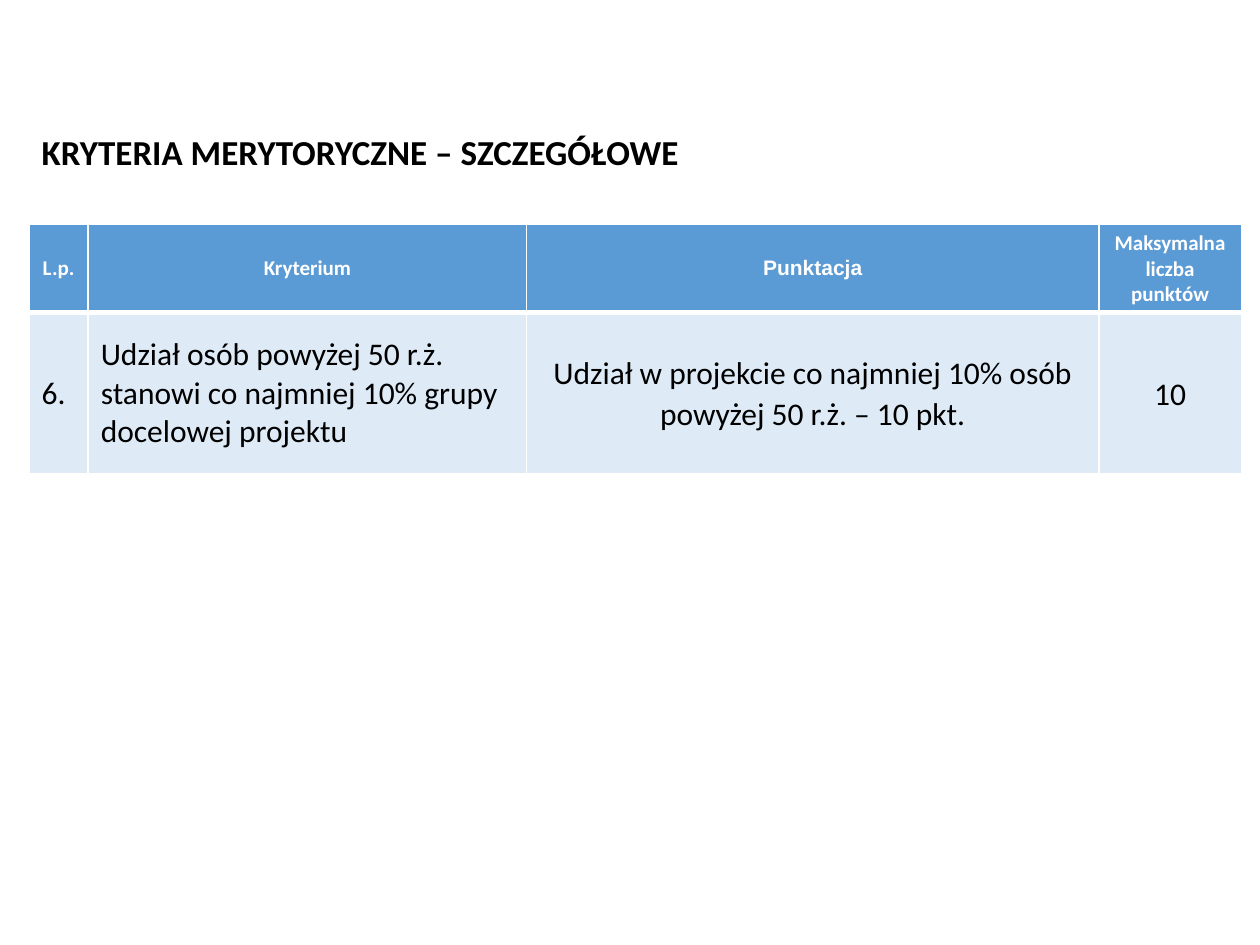
from lxml.etree import SubElement
from pptx import Presentation
from pptx.dml.color import RGBColor
from pptx.enum.text import MSO_ANCHOR, MSO_AUTO_SIZE, PP_ALIGN
from pptx.oxml.ns import qn
from pptx.util import Pt

WHITE = RGBColor(0xFF, 0xFF, 0xFF)
BLACK = RGBColor(0, 0, 0)
BLUE = RGBColor(0x5B, 0x9B, 0xD5)
PALE = RGBColor(0xDE, 0xEB, 0xF7)

LEFT = 16.6
COLS = [33.8, 250.6, 326.9, 81.5]
ROWS = [50.4, 92.2]
HEAD = ["L.p.", "Kryterium", "Punktacja", "Maksymalna liczba punktów"]
BODY = [
    "6.",
    "Udział osób powyżej 50 r.ż. stanowi co najmniej 10% grupy docelowej projektu",
    "Udział w projekcie co najmniej 10% osób powyżej 50 r.ż. – 10 pkt.",
    "10",
]


def style(para, size, color, bold, face="Calibri"):
    for run in para.runs:
        font = run.font
        font.name, font.size, font.bold = face, Pt(size), bold
        font.color.rgb = color


def add_title(slide, text):
    title = slide.shapes.title
    title.left, title.top = Pt(LEFT), Pt(70.6)
    title.width, title.height = Pt(390.2), Pt(31.5)
    frame = title.text_frame
    frame.text = text
    frame.word_wrap = False
    frame.auto_size = MSO_AUTO_SIZE.SHAPE_TO_FIT_TEXT
    frame.vertical_anchor = MSO_ANCHOR.MIDDLE
    para = frame.paragraphs[0]
    para.alignment = PP_ALIGN.LEFT
    style(para, 20, BLACK, True)


def add_edges(cell, top, bottom):
    """Draw white cell borders: 1 pt at the sides, given widths above and below."""
    props = cell._tc.get_or_add_tcPr()
    for side, width in (("L", 1), ("R", 1), ("T", top), ("B", bottom)):
        line = SubElement(props, qn(f"a:ln{side}"), w=str(Pt(width)))
        fill = SubElement(line, qn("a:solidFill"))
        SubElement(fill, qn("a:srgbClr"), val=str(WHITE))


def set_cell(cell, text, color, top, bottom):
    """Fill a cell and return its paragraph."""
    add_edges(cell, top, bottom)
    cell.fill.solid()
    cell.fill.fore_color.rgb = color
    cell.vertical_anchor = MSO_ANCHOR.MIDDLE
    cell.text_frame.text = text
    return cell.text_frame.paragraphs[0]


def add_grid(slide):
    frame = slide.shapes.add_table(
        len(ROWS), len(COLS), Pt(LEFT), Pt(128.2), Pt(sum(COLS)), Pt(sum(ROWS))
    )
    table = frame.table
    for col, width in zip(table.columns, COLS):
        col.width = Pt(width)
    for row, height in zip(table.rows, ROWS):
        row.height = Pt(height)

    for i, text in enumerate(HEAD):
        para = set_cell(table.cell(0, i), text, BLUE, 1, 3)
        para.alignment = PP_ALIGN.CENTER
        style(para, 12, WHITE, True, "Arial" if text == "Punktacja" else "Calibri")

    for i, text in enumerate(BODY):
        cell = table.cell(1, i)
        para = set_cell(cell, text, PALE, 3, 1)
        style(para, 18, BLACK, False)
        if i >= 2:
            cell.margin_left = cell.margin_right = Pt(5)
            cell.margin_top = cell.margin_bottom = 0
            para.alignment = PP_ALIGN.CENTER
            para.line_spacing = 1.07
            para.space_after = Pt(8)


def main():
    deck = Presentation()
    deck.slide_width, deck.slide_height = Pt(720), Pt(540)
    slide = deck.slides.add_slide(deck.slide_layouts[5])
    add_grid(slide)
    add_title(slide, "KRYTERIA MERYTORYCZNE – SZCZEGÓŁOWE")
    deck.save("out.pptx")


if __name__ == "__main__":
    main()
